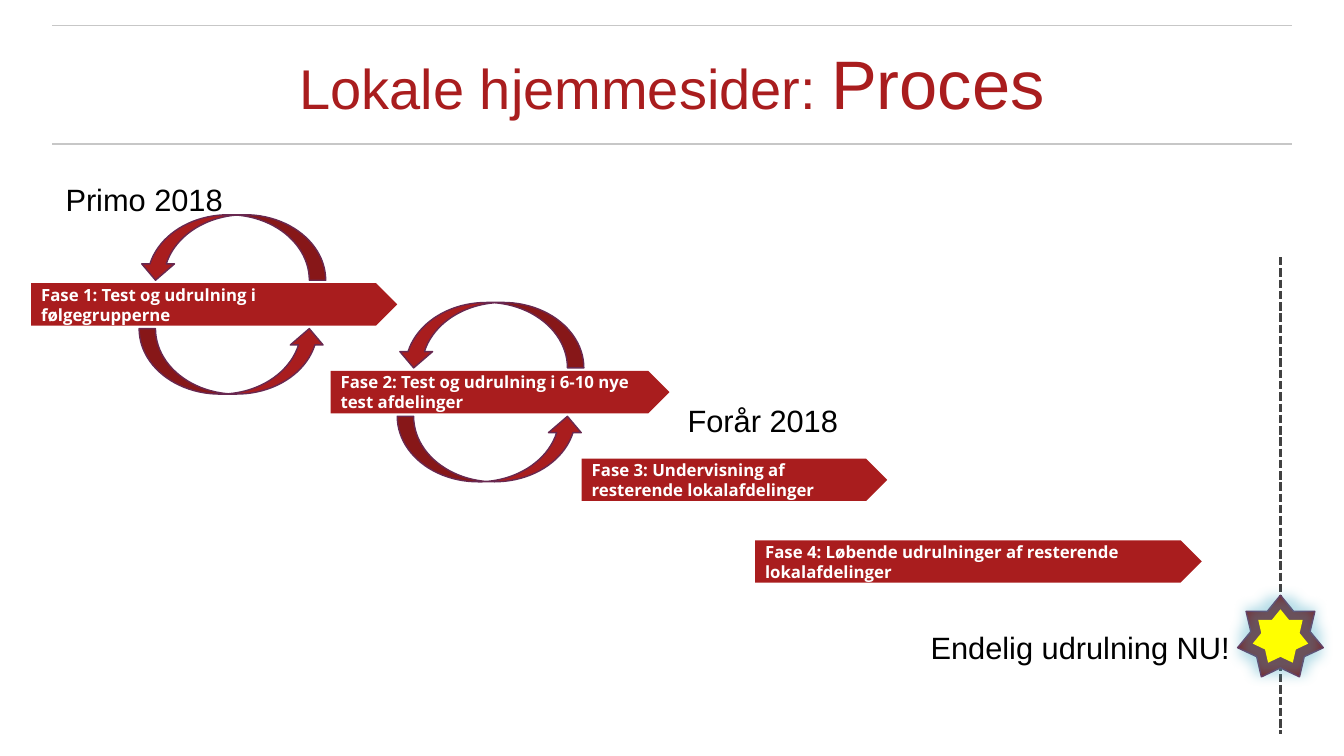
from dataclasses import dataclass

from lxml import etree
from pptx import Presentation
from pptx.dml.color import RGBColor
from pptx.enum.dml import MSO_LINE
from pptx.enum.shapes import MSO_CONNECTOR, MSO_SHAPE
from pptx.enum.text import MSO_ANCHOR, PP_ALIGN
from pptx.oxml.ns import qn
from pptx.util import Inches, Pt

PENTAGON = MSO_SHAPE.PENTAGON
LOOP_ARROW = MSO_SHAPE.CURVED_UP_ARROW
STAR = MSO_SHAPE.STAR_7_POINT
STRAIGHT = MSO_CONNECTOR.STRAIGHT
DASH = MSO_LINE.SQUARE_DOT
MIDDLE = MSO_ANCHOR.MIDDLE
LEFT, CENTER = PP_ALIGN.LEFT, PP_ALIGN.CENTER


@dataclass(frozen=True)
class Theme:
    red: str = "A91D1E"
    dark_red: str = "7F1616"
    plum: str = "682850"
    yellow: str = "FFFF00"
    glow: str = "4BACC6"
    rule: str = "C7C7C7"
    deadline: str = "414141"
    black: str = "000000"
    white: str = "FFFFFF"
    heading_font: str = "Arial"
    phase_font: str = "Open Sans"
    title_size: int = 40
    title_accent_size: int = 49
    label_size: int = 22
    phase_size: int = 12


THEME = Theme()
WIDTH, HEIGHT = 13.33, 7.5
MARGIN = 0.52
RULE_TOPS = (0.25, 1.43)
TITLE = (("Lokale hjemmesider: ", THEME.title_size), ("Proces", THEME.title_accent_size))
PHASES = (
    ("Fase 1: Test og udrulning i følgegrupperne", 0.31, 2.81, 3.63, 1.38),
    ("Fase 2: Test og udrulning i 6-10 nye test afdelinger", 3.28, 3.68, 3.36, 3.94),
    ("Fase 3: Undervisning af resterende lokalafdelinger", 5.77, 4.55, 3.03, None),
    ("Fase 4: Løbende udrulninger af resterende lokalafdelinger", 7.49, 5.36, 4.43, None),
)
PHASE_HEIGHT = 0.42
LOOP_WIDTH, LOOP_HEIGHT, LOOP_GAP = 1.85, 0.65, 0.03
LABELS = (
    ("Primo 2018", 0.65, 1.67, 1.82),
    ("Forår 2018", 6.82, 3.86, 1.82),
    ("Endelig udrulning NU!", 9.23, 6.12, 3.05),
)
LABEL_HEIGHT = 0.61
DEADLINE_X, DEADLINE_TOP, DEADLINE_BOTTOM = 12.7, 2.55, 7.28
STAR_MIDDLE = (12.7, 6.31)
OUTER_STAR, INNER_STAR = (0.85, 0.81), (0.55, 0.53)
GLOW_RADIUS = Pt(18)


def color(value):
    return RGBColor.from_string(value)


def add_line(slide, x1, y1, x2, y2, line_color, width):
    connector = slide.shapes.add_connector(
        STRAIGHT, Inches(x1), Inches(y1), Inches(x2), Inches(y2))
    connector.line.color.rgb = color(line_color)
    connector.line.width = Pt(width)
    etree.SubElement(connector._element.spPr, qn("a:effectLst"))
    return connector


def add_shape(slide, kind, left, top, width, height, fill, outline=None):
    shape = slide.shapes.add_shape(
        kind, Inches(left), Inches(top), Inches(width), Inches(height))
    shape.shadow.inherit = False
    shape.fill.solid()
    shape.fill.fore_color.rgb = color(fill)
    if outline:
        shape.line.color.rgb = color(outline)
        shape.line.width = Pt(1)
    else:
        shape.line.fill.background()
    return shape


def style(paragraph, font_name, size, font_color, alignment=LEFT, bold=False):
    paragraph.alignment = alignment
    paragraph.font.name = font_name
    paragraph.font.size = Pt(size)
    paragraph.font.bold = bold
    paragraph.font.color.rgb = color(font_color)


def add_text_box(slide, left, top, width, height):
    box = slide.shapes.add_textbox(
        Inches(left), Inches(top), Inches(width), Inches(height))
    frame = box.text_frame
    frame.word_wrap = True
    frame.vertical_anchor = MIDDLE
    frame.margin_left = frame.margin_right = frame.margin_top = frame.margin_bottom = 0
    return frame.paragraphs[0]


def add_title(slide):
    paragraph = add_text_box(slide, MARGIN, 0.28, WIDTH - 2 * MARGIN, 1.06)
    style(paragraph, THEME.heading_font, THEME.title_size, THEME.red, CENTER)
    for text, size in TITLE:
        run = paragraph.add_run()
        run.text = text
        run.font.size = Pt(size)


def add_phase(slide, text, left, top, width, loop_left):
    phase = add_shape(slide, PENTAGON, left, top, width, PHASE_HEIGHT, THEME.red)
    phase.text_frame.word_wrap = True
    phase.text_frame.vertical_anchor = MIDDLE
    paragraph = phase.text_frame.paragraphs[0]
    paragraph.text = text
    style(paragraph, THEME.phase_font, THEME.phase_size, THEME.white, bold=True)
    if loop_left is None:
        return
    above = top - LOOP_GAP - LOOP_HEIGHT
    below = top + PHASE_HEIGHT + LOOP_GAP
    for loop_top, rotation in ((below, 0), (above, 180)):
        arrow = add_shape(slide, LOOP_ARROW, loop_left, loop_top,
                          LOOP_WIDTH, LOOP_HEIGHT, THEME.red, THEME.plum)
        arrow.rotation = rotation


def add_star(slide, size, fill, outline=None):
    left, top = (middle - length / 2 for middle, length in zip(STAR_MIDDLE, size))
    return add_shape(slide, STAR, left, top, *size, fill, outline)


def add_glow(shape):
    effects = shape._element.spPr.find(qn("a:effectLst"))
    glow = etree.SubElement(effects, qn("a:glow"), rad=str(GLOW_RADIUS))
    tint = etree.SubElement(glow, qn("a:srgbClr"), val=THEME.glow)
    etree.SubElement(tint, qn("a:alpha"), val="40000")


def main():
    presentation = Presentation()
    presentation.slide_width = Inches(WIDTH)
    presentation.slide_height = Inches(HEIGHT)
    slide = presentation.slides.add_slide(presentation.slide_layouts[6])

    for top in RULE_TOPS:
        add_line(slide, MARGIN, top, WIDTH - MARGIN, top, THEME.rule, 1)
    add_title(slide)
    for phase in PHASES:
        add_phase(slide, *phase)
    for text, left, top, width in LABELS:
        paragraph = add_text_box(slide, left, top, width, LABEL_HEIGHT)
        paragraph.text = text
        style(paragraph, THEME.heading_font, THEME.label_size, THEME.black)
    deadline = add_line(slide, DEADLINE_X, DEADLINE_TOP, DEADLINE_X, DEADLINE_BOTTOM,
                        THEME.deadline, 2)
    deadline.line.dash_style = DASH
    add_star(slide, OUTER_STAR, THEME.dark_red, THEME.plum)
    add_glow(add_star(slide, INNER_STAR, THEME.yellow))

    presentation.save("out.pptx")


if __name__ == "__main__":
    main()
